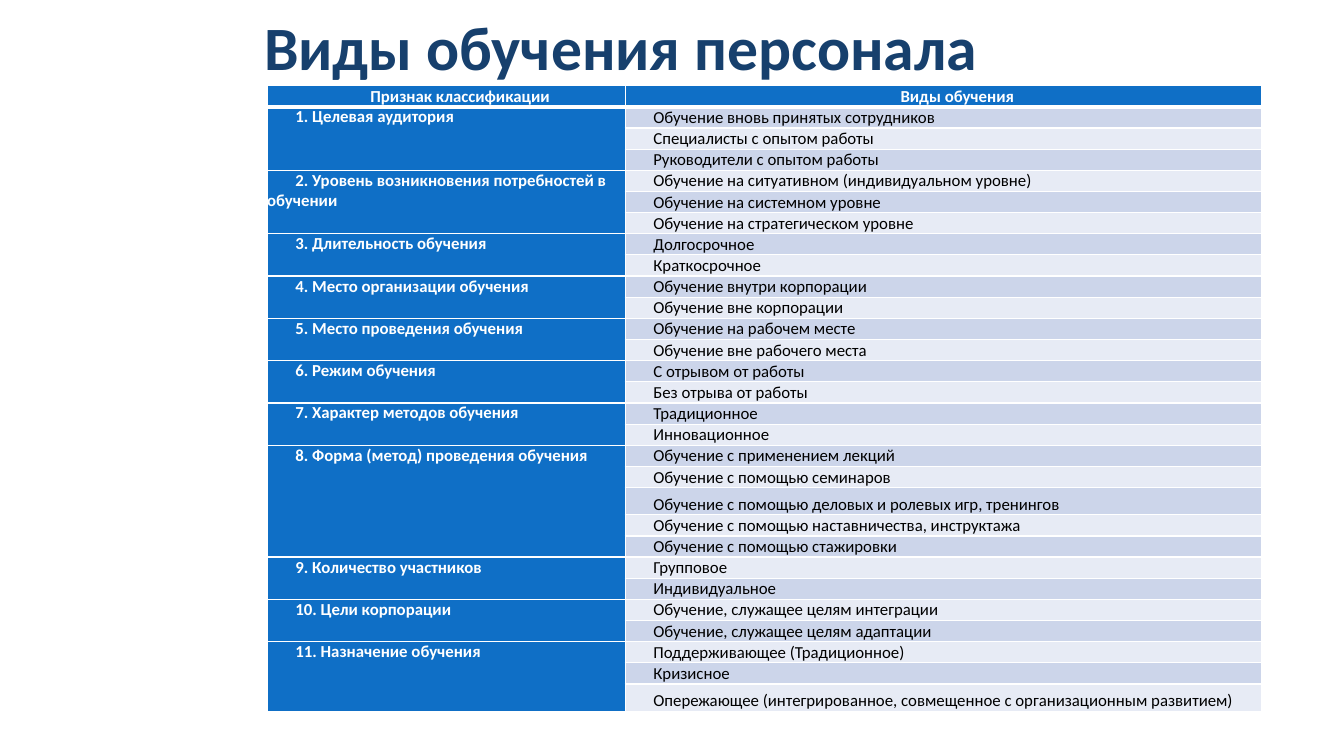
"""Build a slide with a table that classifies kinds of staff training."""
from lxml import etree
from pptx import Presentation
from pptx.dml.color import RGBColor
from pptx.enum.text import MSO_ANCHOR, MSO_AUTO_SIZE, PP_ALIGN
from pptx.oxml.ns import qn
from pptx.util import Inches, Pt

LEFT, CENTER = PP_ALIGN.LEFT, PP_ALIGN.CENTER
TOP, MIDDLE, BOTTOM = MSO_ANCHOR.TOP, MSO_ANCHOR.MIDDLE, MSO_ANCHOR.BOTTOM
NO_AUTOFIT = MSO_AUTO_SIZE.NONE

TITLE = "Виды обучения персонала"
HEADERS = ("Признак классификации", "Виды обучения")
GROUPS = [
    ("1. Целевая аудитория", [
        "Обучение вновь принятых сотрудников",
        "Специалисты с опытом работы",
        "Руководители с опытом работы"]),
    ("2. Уровень возникновения потребностей в обучении", [
        "Обучение на ситуативном (индивидуальном уровне)",
        "Обучение на системном уровне",
        "Обучение на стратегическом уровне"]),
    ("3. Длительность обучения", ["Долгосрочное", "Краткосрочное"]),
    ("4. Место организации обучения", [
        "Обучение внутри корпорации", "Обучение вне корпорации"]),
    ("5. Место проведения обучения", [
        "Обучение на рабочем месте", "Обучение вне рабочего места"]),
    ("6. Режим обучения", ["С отрывом от работы", "Без отрыва от работы"]),
    ("7. Характер методов обучения", ["Традиционное", "Инновационное"]),
    ("8. Форма (метод) проведения обучения", [
        "Обучение с применением лекций",
        "Обучение с помощью семинаров",
        "Обучение с помощью деловых и ролевых игр, тренингов",
        "Обучение с помощью наставничества, инструктажа",
        "Обучение с помощью стажировки"]),
    ("9. Количество участников", ["Групповое", "Индивидуальное"]),
    ("10. Цели корпорации", [
        "Обучение, служащее целям интеграции",
        "Обучение, служащее целям адаптации"]),
    ("11. Назначение обучения", [
        "Поддерживающее (Традиционное)",
        "Кризисное",
        "Опережающее (интегрированное, совмещенное с организационным развитием)"]),
]

NAVY, BLUE, WHITE, BLACK = "17406D", "0F6FC6", "FFFFFF", "000000"
BANDS = ("CCD5EA", "E7EBF5")
TITLE_FONT = {"name": "Calibri", "size": Pt(44), "bold": True}
LABEL_FONT = {"name": "Calibri", "size": Pt(12), "bold": True}
KIND_FONT = {**LABEL_FONT, "bold": False}
COLUMN_WIDTHS = (3.55, 6.31)
ROW_HEIGHT, TALL_ROW_HEIGHT = 0.21, 0.27
TALL_ROWS = (19, 28)
FIRST_LINE_INDENT = 0.28
MARGINS = ("margin_left", "margin_right", "margin_top", "margin_bottom")


def rgb(value):
    return RGBColor.from_string(value)


def format_font(font, settings, color):
    for name, value in settings.items():
        setattr(font, name, value)
    font.color.rgb = rgb(color)


def add_borders(cell, row):
    properties = cell._tc.get_or_add_tcPr()
    widths = {"L": 1, "R": 1, "T": 3 if row == 1 else 1, "B": 3 if row == 0 else 1}
    for side, width in widths.items():
        line = etree.SubElement(properties, qn(f"a:ln{side}"), w=str(Pt(width)))
        fill = etree.SubElement(line, qn("a:solidFill"))
        etree.SubElement(fill, qn("a:srgbClr"), val=WHITE)


def write_cell(cell, text, settings, color, anchor, alignment=LEFT):
    cell.vertical_anchor = anchor
    paragraph = cell.text_frame.paragraphs[0]
    paragraph._p.get_or_add_pPr().set("indent", str(Inches(FIRST_LINE_INDENT)))
    paragraph.alignment = alignment
    run = paragraph.add_run()
    run.text = text
    format_font(run.font, settings, color)


def add_title(slide):
    title = slide.shapes.title
    title.left, title.top = Inches(2.52), Inches(0.17)
    title.width, title.height = Inches(10.32), Inches(0.7)
    frame = title.text_frame
    frame.text = TITLE
    frame.auto_size = NO_AUTOFIT
    frame.vertical_anchor = MIDDLE
    paragraph = frame.paragraphs[0]
    paragraph.alignment = LEFT
    paragraph.line_spacing = 0.8
    format_font(paragraph.runs[0].font, TITLE_FONT, NAVY)


def add_training_table(slide):
    row_count = 1 + sum(len(kinds) for _, kinds in GROUPS)
    heights = [TALL_ROW_HEIGHT if row in TALL_ROWS else ROW_HEIGHT
               for row in range(row_count)]
    table = slide.shapes.add_table(
        row_count, len(HEADERS), Inches(2.65), Inches(0.85),
        Inches(sum(COLUMN_WIDTHS)), Inches(sum(heights))).table
    for column, width in zip(table.columns, COLUMN_WIDTHS):
        column.width = Inches(width)
    for row, height in enumerate(heights):
        table.rows[row].height = Inches(height)
        for column in range(len(HEADERS)):
            cell = table.cell(row, column)
            for margin in MARGINS:
                setattr(cell, margin, 0)
            add_borders(cell, row)
            cell.fill.solid()
            is_label = row == 0 or column == 0
            cell.fill.fore_color.rgb = rgb(BLUE if is_label else BANDS[(row - 1) % 2])

    for column, header in enumerate(HEADERS):
        write_cell(table.cell(0, column), header, LABEL_FONT, WHITE, BOTTOM, CENTER)
    first_row = 1
    for label, kinds in GROUPS:
        label_cell = table.cell(first_row, 0)
        label_cell.merge(table.cell(first_row + len(kinds) - 1, 0))
        write_cell(label_cell, label, LABEL_FONT, WHITE, TOP)
        for row, kind in enumerate(kinds, first_row):
            write_cell(table.cell(row, 1), kind, KIND_FONT, BLACK, BOTTOM)
        first_row += len(kinds)


def main():
    presentation = Presentation()
    presentation.slide_width, presentation.slide_height = Inches(13.33), Inches(7.5)
    slide = presentation.slides.add_slide(presentation.slide_layouts[5])
    add_title(slide)
    add_training_table(slide)
    presentation.save("out.pptx")


if __name__ == "__main__":
    main()
